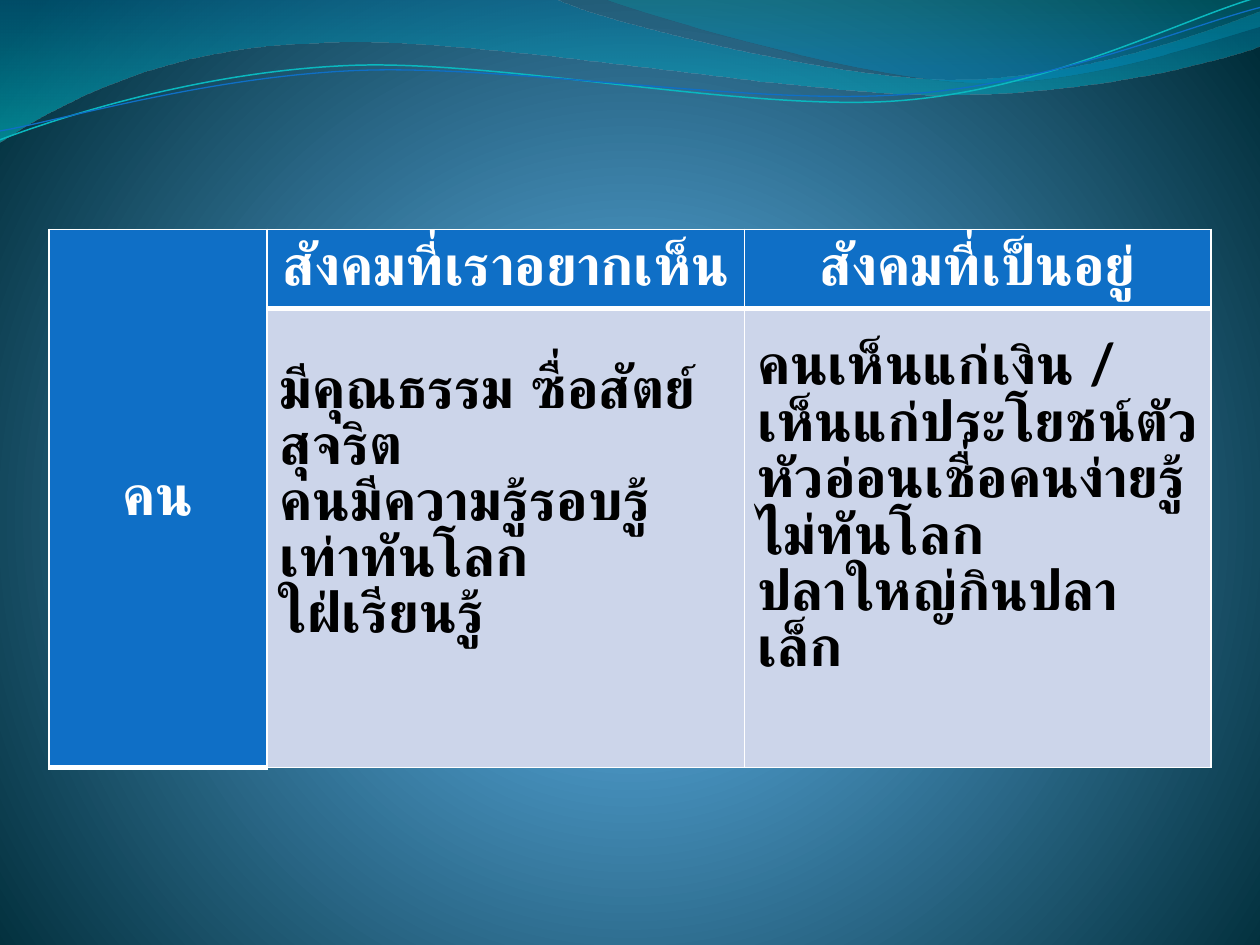
import math
import pptx
import pptx.util
import pptx.oxml
import pptx.oxml.ns
import pptx.dml.color
import pptx.enum.text

Inches = pptx.util.Inches
Pt = pptx.util.Pt
NS = 'xmlns:a="http://schemas.openxmlformats.org/drawingml/2006/main"'
COLORS = {
    "white": "FFFFFF", "black": "000000", "blue": "0F6FC6", "pale": "CCD5EA",
    "aqua": "0AB8BF", "sky": "4AA0D6", "mid": "4C98C7", "night": "002C38",
    "sea": "0074A1", "foam": "00C6CF", "teal": "00A1A9", "wave": "008BBF",
}
FONT = "Lato"


def rgb(name):
    return pptx.dml.color.RGBColor.from_string(COLORS[name])


def blend(stops, shade):
    """Gradient fill from (position, color, opacity) stops."""
    marks = "".join(
        f'<a:gs pos="{pos * 1000}"><a:srgbClr val="{COLORS[name]}">'
        f'<a:alpha val="{alpha * 1000}"/></a:srgbClr></a:gs>'
        for pos, name, alpha in stops)
    return f'<a:gradFill {NS} rotWithShape="1"><a:gsLst>{marks}</a:gsLst>{shade}</a:gradFill>'


def backdrop(slide):
    shade = ('<a:path path="circle"><a:fillToRect l="10000" t="110000" '
             'r="10000" b="100000"/></a:path>')
    fill = blend([(0, "sky", 100), (25, "mid", 100), (100, "night", 100)], shade)
    slide.background.fill.solid()
    props = slide.element.cSld.bg.bgPr
    props.replace(props[0], pptx.oxml.parse_xml(fill))


def turn(point, pivot, angle):
    x, y = point[0] - pivot[0], point[1] - pivot[1]
    cos, sin = math.cos(math.radians(angle)), math.sin(math.radians(angle))
    return pivot[0] + x * cos - y * sin, pivot[1] + x * sin + y * cos


def outline(slide, left, top, start, parts, close, pivot=(0, 0), tilt=0):
    """Freeform from a start and parts: pairs are lines, sixes are curves."""
    def place(part):
        pairs = [turn(p, pivot, -tilt) for p in zip(part[::2], part[1::2])]
        return [(Inches(left + x), Inches(top + y)) for x, y in pairs]

    spots = [place(part) for part in parts]
    build = slide.shapes.build_freeform(*place(start)[0])
    build.add_line_segments([spot[-1] for spot in spots], close=close)
    shape = build.convert_to_shape()
    # Bend the segments that have control points
    segs = list(shape.element.iter(pptx.oxml.ns.qn("a:lnTo")))
    for seg, spot in zip(segs, spots):
        if len(spot) == 3:
            marks = "".join(f'<a:pt x="{x - shape.left}" y="{y - shape.top}"/>'
                            for x, y in spot)
            curve = f"<a:cubicBezTo {NS}>{marks}</a:cubicBezTo>"
            seg.getparent().replace(seg, pptx.oxml.parse_xml(curve))
    shape.rotation = tilt
    shape.shadow.inherit = False
    return shape


def waves(slide, left, top):
    # Filled bands
    down = '<a:lin ang="5400000" scaled="1"/>'
    bands = [
        ((0, 0), [(4.4, -0.01), (4.76, 0.17, 6.64, 0.63, 7.58, 0.63),
                  (8.53, 0.63, 9.58, 0.26, 10, 0.09), (10.01, 0.36),
                  (9.83, 0.44, 8.7, 0.76, 7.46, 0.75),
                  (6.22, 0.75, 3.82, 0.28, 2.57, 0.34),
                  (1.29, 0.36, 0.46, 0.83, -0.01, 1.13)],
         [(0, "sea", 45), (100, "foam", 55)]),
        ((4.79, -0.01), [(5.09, 0.11, 6.82, 0.62, 7.69, 0.65),
                         (8.56, 0.69, 9.61, 0.32, 10, 0.21), (10, 0)],
         [(0, "teal", 30), (80, "wave", 45)]),
    ]
    for start, parts, stops in bands:
        shape = outline(slide, left, top, start, parts, True)
        shape.line.fill.background()
        shape.fill.solid()
        props = shape.element.spPr
        old = props.find(pptx.oxml.ns.qn("a:solidFill"))
        props.replace(old, pptx.oxml.parse_xml(blend(stops, down)))

    # Thin lines
    lines = [
        ((0, 1.11), [(0.48, 0.93, 1.58, 0.57, 2.77, 0.52),
                     (3.95, 0.47, 5.93, 0.89, 7.13, 0.8),
                     (8.33, 0.71, 9.38, 0.15, 9.98, -0.02)], "aqua", 0.85),
        ((0, 1.04), [(0.47, 0.96, 1.64, 0.61, 2.83, 0.56),
                     (4.03, 0.51, 5.97, 0.84, 7.17, 0.75),
                     (8.36, 0.67, 9.41, 0.21, 10, 0.06)], "blue", 0.75),
    ]
    for start, parts, name, width in lines:
        # A tilted box turns about its own middle
        tilt = -2.7
        flat = [turn(p, (0, 0), -tilt) for p in [start] + [q[-2:] for q in parts]]
        xs, ys = zip(*flat)
        mid = ((min(xs) + max(xs)) / 2, (min(ys) + max(ys)) / 2)
        pivot = turn(mid, (0, 0), tilt)
        shape = outline(slide, left, top, start, parts, False, pivot, tilt)
        shape.fill.background()
        shape.line.color.rgb = rgb(name)
        shape.line.width = Pt(width)


def border(cell, low):
    props = cell._tc.get_or_add_tcPr()
    for i, side in enumerate(("lnL", "lnR", "lnT", "lnB")):
        width = Pt(low if side == "lnB" else 1)
        props.insert(i, pptx.oxml.parse_xml(
            f'<a:{side} {NS} w="{width}"><a:solidFill><a:srgbClr '
            f'val="{COLORS["white"]}"/></a:solidFill></a:{side}>'))


def style(cell, text, head):
    cell.text_frame.text = text
    cell.vertical_anchor = pptx.enum.text.MSO_ANCHOR.MIDDLE
    cell.fill.solid()
    cell.fill.fore_color.rgb = rgb("blue" if head else "pale")
    for para in cell.text_frame.paragraphs:
        if head:
            para.alignment = pptx.enum.text.PP_ALIGN.CENTER
        for run in para.runs:
            run.font.name = FONT
            run.font.size = Pt(32)
            run.font.bold = True
            run.font.color.rgb = rgb("white" if head else "black")
    border(cell, 3 if head else 1)


def compare(slide, left, top, width, height):
    rows = [
        ["คน", "สังคมที่เราอยากเห็น", "สังคมที่เป็นอยู่"],
        ["", "มีคุณธรรม ซื่อสัตย์ สุจริต\nคนมีความรู้รอบรู้เท่าทันโลก\nใฝ่เรียนรู้",
         "คนเห็นแก่เงิน / เห็นแก่ประโยชน์ตัว\nหัวอ่อนเชื่อคนง่ายรู้ไม่ทันโลก\nปลาใหญ่กินปลาเล็ก"],
    ]
    table = slide.shapes.add_table(2, 3, Inches(left), Inches(top),
                                   Inches(width), Inches(height)).table
    for col, size in zip(table.columns, (1.73, 3.79, width - 5.52)):
        col.width = Inches(size)
    for row, size in zip(table.rows, (0.63, height - 0.63)):
        row.height = Inches(size)
    for r, texts in enumerate(rows):
        for c, text in enumerate(texts):
            style(table.cell(r, c), text, r == 0 or c == 0)
    # Lift the body text above the middle, and keep its phrases whole
    for c in (1, 2):
        table.cell(1, c).margin_bottom = Inches(0.6)
    table.cell(1, 1).margin_right = Inches(0.25)
    table.cell(0, 0).merge(table.cell(1, 0))


def main():
    deck = pptx.Presentation()
    deck.slide_width, deck.slide_height = Inches(10), Inches(7.5)
    slide = deck.slides.add_slide(deck.slide_layouts[6])
    backdrop(slide)
    waves(slide, 0, 0)
    compare(slide, 0.39, 1.82, 9.22, 4.27)
    deck.save("out.pptx")


if __name__ == "__main__":
    main()
